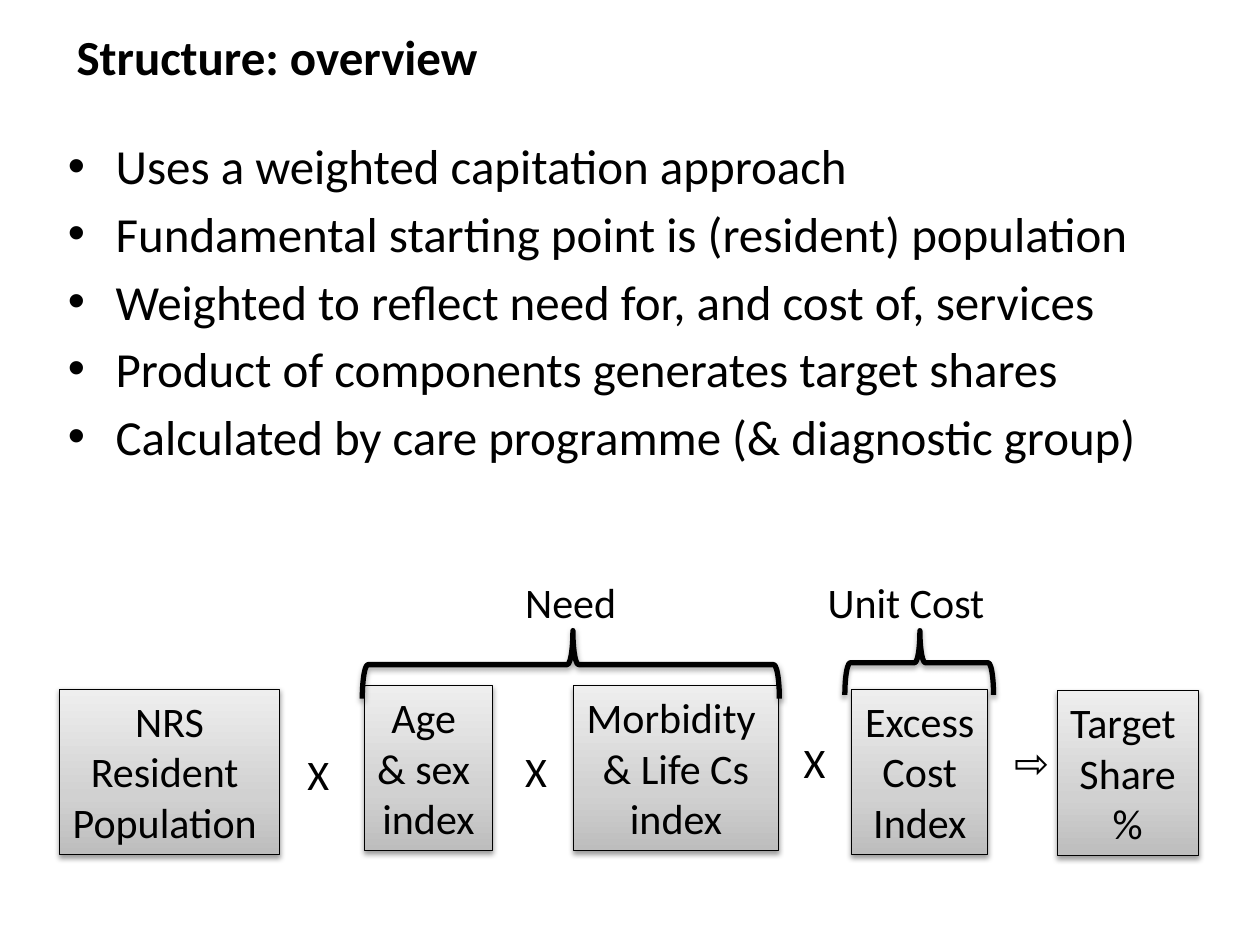
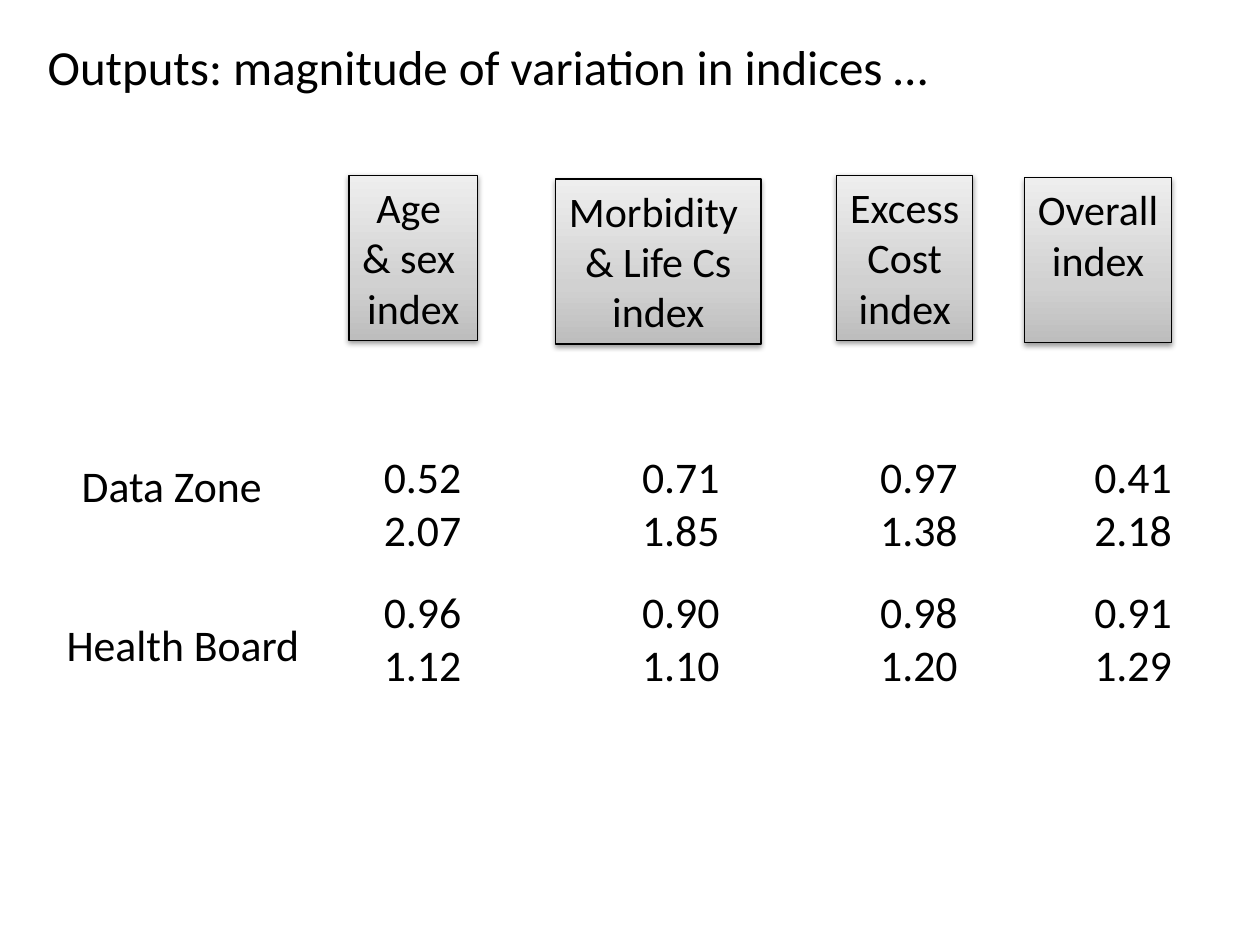
from copy import deepcopy
from dataclasses import dataclass

from lxml.etree import SubElement
from pptx import Presentation
from pptx.dml.color import RGBColor
from pptx.enum.shapes import MSO_SHAPE
from pptx.enum.text import MSO_ANCHOR, MSO_AUTO_SIZE, PP_ALIGN
from pptx.oxml.ns import qn
from pptx.util import Inches, Pt


@dataclass(frozen=True)
class Theme:
    font: str = "Calibri"
    ink: str = "000000"
    shades: tuple = ((0, "BDBDBD"), (0.35, "D1D1D1"), (1, "EEEEEE"))
    head: int = 28
    label: int = 24
    data: int = 25


THEME = Theme()
AGE = ["Age ", "& sex ", "index"]
MORBID = ["Morbidity ", "& Life Cs", "index"]
POINTS = [
    "Uses a weighted capitation approach",
    "Fundamental starting point is (resident) population",
    "Weighted to reflect need for, and cost of, services",
    "Product of components generates target shares",
    "Calculated by care programme (& diagnostic group)",
]
FACTORS = [
    (0.47, 5.47, 1.75, ["NRS", "Resident ", "Population "]),
    (2.89, 5.44, 1.02, AGE),
    (4.55, 5.44, 1.63, MORBID),
    (6.76, 5.47, 1.08, ["Excess", "Cost", "Index"]),
    (8.39, 5.48, 1.12, ["Target ", "Share", "%"]),
]
SIGNS = [
    (2.34, 5.89, 0.38, "X"),
    (4.07, 5.87, 0.38, "X"),
    (6.28, 5.8, 0.38, "X"),
    (7.95, 5.8, 0.38, "⇨"),
    (4.07, 4.53, 1.09, "Need"),
    (6.47, 4.53, 1.46, "Unit Cost"),
]
BRACES = [(4.26, 3.62, 0.54, 3.31), (7.04, 4.67, 0.51, 1.18)]
HEADS = [
    (2.77, 1.39, 1.02, AGE),
    (4.41, 1.42, 1.63, MORBID),
    (6.64, 1.39, 1.08, ["Excess", "Cost", "index"]),
    (8.13, 1.41, 1.17, ["Overall", "index"]),
]
ZONES = [["0.52", "0.71", "0.97", "0.41"], ["2.07", "1.85", "1.38", "2.18"]]
BOARDS = [["0.96", "0.90", "0.98", "0.91"], ["1.12", "1.10", "1.20", "1.29"]]


def style(item, **values):
    for name, value in values.items():
        setattr(item, name, value)


def write(frame, lines, size, align=PP_ALIGN.LEFT, bold=False):
    for spot, line in enumerate(lines):
        para = frame.paragraphs[0] if spot == 0 else frame.add_paragraph()
        para.alignment = align
        run = para.add_run()
        run.text = line
        style(run.font, name=THEME.font, size=Pt(size), bold=bold)
        run.font.color.rgb = RGBColor.from_string(THEME.ink)


def add_text(slide, place, lines, size, bold=False, **values):
    frame = slide.shapes.add_textbox(*map(Inches, place)).text_frame
    style(frame, **{"word_wrap": True, **values})
    write(frame, lines, size, bold=bold)
    return frame


def add_title(slide, left, top, text, bold=False):
    add_text(slide, (left, top, 9, 0.63), [text], THEME.head, bold,
             vertical_anchor=MSO_ANCHOR.MIDDLE)


def add_list(slide, place, lines):
    frame = add_text(slide, place, lines, THEME.head)
    for para in frame.paragraphs:
        para.space_before = Pt(5)
        props = para._p.get_or_add_pPr()
        props.set("marL", str(Inches(0.38)))
        props.set("indent", str(Inches(-0.38)))
        SubElement(props, qn("a:buFont"), typeface="Arial")
        SubElement(props, qn("a:buChar"), char="•")


def add_shape(slide, kind, place, line, drop, alpha):
    shape = slide.shapes.add_shape(kind, *map(Inches, place))
    shape.line.color.rgb = RGBColor.from_string(THEME.ink)
    shape.line.width = Pt(line)
    shape.shadow.inherit = False
    glow = shape._element.spPr.find(qn("a:effectLst"))
    cast = SubElement(glow, qn("a:outerShdw"), blurRad=str(Pt(3.1)),
                      dist=str(Pt(drop)), dir="5400000", rotWithShape="0")
    tint = SubElement(cast, qn("a:srgbClr"), val=THEME.ink)
    SubElement(tint, qn("a:alpha"), val=str(alpha * 1000))
    return shape


def add_box(slide, left, top, width, lines):
    box = add_shape(slide, MSO_SHAPE.RECTANGLE, (left, top, width, 1.31),
                    0.75, 1.6, 38)
    box.fill.gradient()
    box.fill.gradient_angle = 90
    stops = box._element.spPr.find(".//" + qn("a:gsLst"))
    stops.append(deepcopy(stops[0]))
    for stop, (spot, shade) in zip(box.fill.gradient_stops, THEME.shades):
        stop.position = spot
        stop.color.rgb = RGBColor.from_string(shade)
    style(box.text_frame, word_wrap=False, vertical_anchor=MSO_ANCHOR.TOP,
          auto_size=MSO_AUTO_SIZE.SHAPE_TO_FIT_TEXT)
    write(box.text_frame, lines, THEME.label, PP_ALIGN.CENTER)


def add_brace(slide, place):
    brace = add_shape(slide, MSO_SHAPE.LEFT_BRACE, place, 3, 1.8, 35)
    brace.fill.background()
    brace.rotation = 90
    brace.adjustments[0] = 0.083
    brace.adjustments[1] = 0.495


def add_grid(slide, left, top, first, rows, anchor):
    widths = [first, 2.05, 1.89, 1.7]
    place = (left, top, sum(widths), 0.82)
    table = slide.shapes.add_table(
        len(rows), len(widths), *map(Inches, place)).table
    style(table, first_row=False, horz_banding=False)
    for column, width in zip(table.columns, widths):
        column.width = Inches(width)
    for r, row in enumerate(rows):
        for c, value in enumerate(row):
            cell = table.cell(r, c)
            cell.fill.background()
            style(cell, margin_left=0, margin_right=0, margin_top=0,
                  margin_bottom=0, vertical_anchor=anchor)
            write(cell.text_frame, [value], THEME.data, PP_ALIGN.RIGHT)


def draw_model(slide):
    add_title(slide, 0.51, 0.13, "Structure: overview", True)
    add_list(slide, (0.44, 1.03, 9.37, 3.31), POINTS)
    for factor in FACTORS:
        add_box(slide, *factor)
    for place in BRACES:
        add_brace(slide, place)
    for left, top, width, text in SIGNS:
        add_text(slide, (left, top, width, 0.5), [text], THEME.label,
                 word_wrap=False)


def draw_range(slide):
    add_title(slide, 0.28, 0.21, "Outputs: magnitude of variation in indices …")
    for head in HEADS:
        add_box(slide, *head)
    add_text(slide, (0.55, 3.59, 1.81, 0.52), ["Data Zone"], THEME.data)
    add_text(slide, (0.43, 4.85, 2.11, 0.52), ["Health Board"], THEME.data)
    add_grid(slide, 2.87, 3.59, 0.79, ZONES, MSO_ANCHOR.BOTTOM)
    add_grid(slide, 2.81, 4.66, 0.85, BOARDS, MSO_ANCHOR.MIDDLE)


def main():
    deck = Presentation()
    style(deck, slide_width=Inches(10), slide_height=Inches(7.5))
    for draw in (draw_model, draw_range):
        draw(deck.slides.add_slide(deck.slide_layouts[6]))
    deck.save("out.pptx")


if __name__ == "__main__":
    main()
